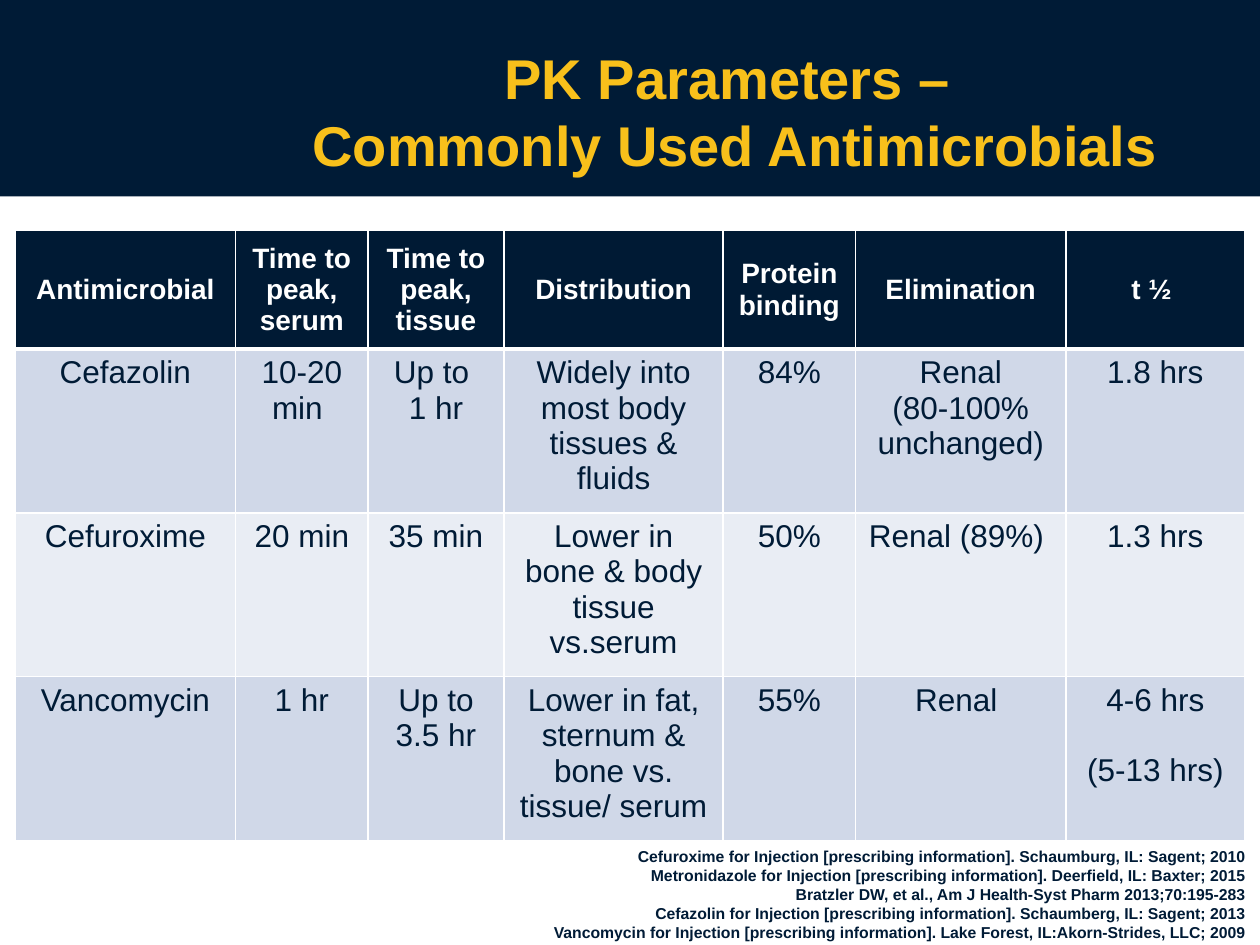
from dataclasses import dataclass

from lxml import etree
from pptx import Presentation
from pptx.dml.color import RGBColor
from pptx.enum.shapes import MSO_SHAPE
from pptx.enum.text import MSO_ANCHOR, PP_ALIGN
from pptx.oxml.ns import qn
from pptx.util import Inches, Pt

CENTER, RIGHT = PP_ALIGN.CENTER, PP_ALIGN.RIGHT
TOP, MIDDLE = MSO_ANCHOR.TOP, MSO_ANCHOR.MIDDLE
RECTANGLE = MSO_SHAPE.RECTANGLE

NAVY, HEADER_FILL, GOLD, WHITE = "001B36", "001A34", "F8C01B", "FFFFFF"
BANDS = ("D0D8E8", "E9EDF4")


@dataclass(frozen=True)
class TextStyle:
    size: int
    color: str
    bold: bool = False
    align: PP_ALIGN = CENTER


TITLE = TextStyle(32, GOLD, True)
HEADER = TextStyle(16, WHITE, True)
BODY = TextStyle(18, NAVY)
REFERENCE = TextStyle(9, NAVY, True, RIGHT)

COL_WIDTHS = (1.75, 1.05, 1.08, 1.74, 1.05, 1.67, 1.42)
HEADER_HEIGHT, BODY_HEIGHT = 0.94, 1.22

ROWS = (
    ("Antimicrobial", "Time to peak, serum", "Time to peak, tissue", "Distribution",
     "Protein binding", "Elimination", "t ½ "),
    ("Cefazolin", "10-20 min ", "Up to \n1 hr", "Widely into most body tissues & fluids",
     "84%", "Renal\n(80-100% unchanged)", "1.8 hrs"),
    ("Cefuroxime", "20 min", "35 min", "Lower in bone & body tissue vs.serum",
     "50%", "Renal (89%) ", "1.3 hrs"),
    ("Vancomycin", "1 hr", "Up to 3.5 hr", "Lower in fat, sternum & bone vs. tissue/ serum",
     "55%", "Renal ", "4-6 hrs\n(5-13 hrs)"),
)

REFERENCES = (
    "Cefuroxime for Injection [prescribing information]. Schaumburg, IL: Sagent; 2010",
    "Metronidazole for Injection [prescribing information]. Deerfield, IL: Baxter; 2015",
    "Bratzler DW, et al., Am J Health-Syst Pharm 2013;70:195-283",
    "Cefazolin for Injection [prescribing information]. Schaumberg, IL: Sagent; 2013",
    "Vancomycin for Injection [prescribing information]. Lake Forest, IL:Akorn-Strides, LLC; 2009",
)


def rgb(color: str) -> RGBColor:
    return RGBColor.from_string(color)


def write_text(tf, text: str, style: TextStyle) -> None:
    tf.text = text
    font = {"name": "Arial", "size": Pt(style.size), "bold": style.bold}
    for p in tf.paragraphs:
        p.alignment = style.align
        for r in p.runs:
            for name, value in font.items():
                setattr(r.font, name, value)
            r.font.color.rgb = rgb(style.color)


def add_text(slide, box: tuple, text: str, style: TextStyle, anchor=TOP) -> None:
    sp = slide.shapes.add_textbox(*(Inches(v) for v in box))
    tf = sp.text_frame
    tf.word_wrap = True
    tf.vertical_anchor = anchor
    write_text(tf, text, style)


def set_borders(cell, widths: dict) -> None:
    tc_pr = cell._tc.get_or_add_tcPr()
    for side, width in widths.items():
        ln = etree.SubElement(tc_pr, qn(f"a:ln{side}"), w=str(Pt(width)))
        fill = etree.SubElement(ln, qn("a:solidFill"))
        etree.SubElement(fill, qn("a:srgbClr"), val=WHITE)


def add_parameter_table(slide, left: float, top: float):
    heights = [HEADER_HEIGHT] + [BODY_HEIGHT] * (len(ROWS) - 1)
    box = (left, top, sum(COL_WIDTHS), sum(heights))
    table = slide.shapes.add_table(
        len(ROWS), len(COL_WIDTHS), *(Inches(v) for v in box)).table
    for col, width in zip(table.columns, COL_WIDTHS):
        col.width = Inches(width)
    for i, (row, height) in enumerate(zip(table.rows, heights)):
        row.height = Inches(height)
        is_header = i == 0
        color = HEADER_FILL if is_header else BANDS[(i - 1) % 2]
        # The rule under the header is thicker than the others
        borders = {"L": 1, "R": 1, "T": 3 if i == 1 else 1, "B": 3 if is_header else 1}
        for cell, text in zip(row.cells, ROWS[i]):
            write_text(cell.text_frame, text, HEADER if is_header else BODY)
            cell.vertical_anchor = MIDDLE if is_header else TOP
            set_borders(cell, borders)
            cell.fill.solid()
            cell.fill.fore_color.rgb = rgb(color)
    return table


def main() -> None:
    prs = Presentation()
    prs.slide_width, prs.slide_height = Inches(10), Inches(7.5)
    slide = prs.slides.add_slide(prs.slide_layouts[6])

    # Title band
    sp = slide.shapes.add_shape(
        RECTANGLE, Inches(0), Inches(-0.02), Inches(10), Inches(1.58))
    sp.shadow.inherit = False
    sp.fill.solid()
    sp.fill.fore_color.rgb = rgb(NAVY)
    sp.line.fill.background()
    add_text(slide, (2, 0.25, 7.67, 1.25),
             "PK Parameters – \vCommonly Used Antimicrobials", TITLE, MIDDLE)

    # Parameter table, with a one-line gap above the last half-life range
    table = add_parameter_table(slide, 0.12, 1.83)
    table.cell(3, 6).text_frame.paragraphs[1].space_before = Pt(20)

    # References
    add_text(slide, (4.06, 6.67, 5.92, 0.86), "\n".join(REFERENCES), REFERENCE)

    prs.save("out.pptx")


if __name__ == "__main__":
    main()
